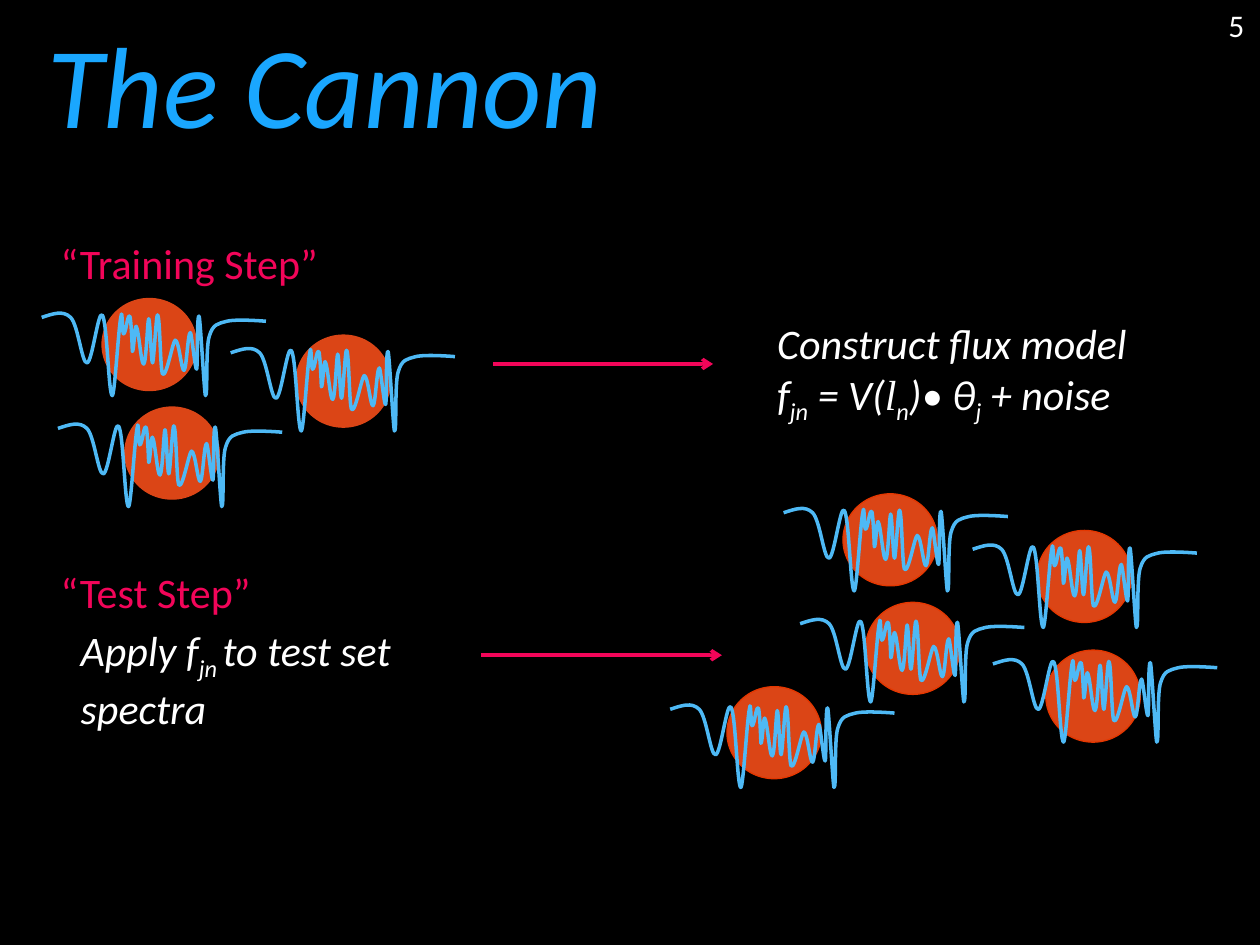
from lxml.etree import SubElement
from pptx import Presentation
from pptx.dml.color import RGBColor
from pptx.enum.shapes import MSO_CONNECTOR, MSO_SHAPE
from pptx.enum.text import MSO_ANCHOR as Anchor, MSO_AUTO_SIZE as AutoSize, PP_ALIGN as Align
from pptx.oxml.ns import qn
from pptx.util import Pt

BLACK = RGBColor(0x00, 0x00, 0x00)
WHITE = RGBColor(0xFF, 0xFF, 0xFF)
TITLE_BLUE = RGBColor(0x1A, 0xA7, 0xFF)
SPECTRUM_BLUE = RGBColor(0x4E, 0xB9, 0xF5)
PINK = RGBColor(0xF2, 0x05, 0x59)
STAR_FILL = RGBColor(0xDB, 0x45, 0x16)
TEST_OUTLINE = RGBColor(0xE4, 0x37, 0x00)

# Spectrum curve on a 0.72 pt grid: start, then (control, control, end) per curve
GRID = Pt(0.72)
SPECTRUM_START = (0, 2)
SPECTRUM_CURVES = [
    ((9, -1), (17, -4), (23, 2)), ((29, 8), (32, 39), (36, 38)),
    ((40, 38), (45, -4), (48, 0)), ((52, 4), (53, 63), (56, 64)),
    ((58, 64), (61, 9), (63, 1)), ((64, -7), (64, 15), (65, 15)),
    ((67, 15), (68, -1), (70, 1)), ((71, 3), (72, 27), (72, 29)),
    ((73, 30), (74, 8), (75, 9)), ((77, 11), (79, 40), (81, 39)),
    ((83, 38), (84, 4), (85, 3)), ((86, 3), (87, 39), (88, 38)),
    ((89, 38), (91, -2), (92, 0)), ((94, 1), (94, 43), (96, 47)),
    ((99, 50), (104, 21), (106, 20)), ((109, 20), (111, 45), (113, 44)),
    ((115, 43), (116, 14), (118, 14)), ((119, 14), (122, 45), (123, 43)),
    ((124, 41), (123, -2), (125, 1)), ((126, 4), (129, 61), (130, 64)),
    ((132, 66), (130, 26), (133, 17)), ((136, 7), (140, 7), (147, 5)),
    ((155, 3), (178, 5), (178, 5)),
]

# Star left, top and spectrum left, top
TRAINING_STARS = [
    (58.3, 170.6, 23.8, 180), (169.2, 191.5, 131.8, 200.2),
    (71.3, 232.6, 33.1, 243.4),
]
TEST_STARS = [
    (481.7, 282.2, 447.8, 291.6), (592.6, 303.1, 555.8, 312.5),
    (494.6, 344.2, 457.2, 355), (597.6, 371.5, 567.4, 378),
    (415.4, 392.4, 383, 403.9),
]


def place(shape, left, top, width, height):
    shape.left, shape.top = Pt(left), Pt(top)
    shape.width, shape.height = Pt(width), Pt(height)


def format_run(run, size, color, italic=False, name="Calibri"):
    font = run.font
    font.name, font.size, font.italic = name, Pt(size), italic
    font.color.rgb = color


def fill_placeholder(shape, box, text, size, color, italic=False):
    """Move a template placeholder and give it one plain line of text."""
    place(shape, *box)
    frame = shape.text_frame
    frame.text = text
    frame.auto_size = AutoSize.NONE
    frame.vertical_anchor = Anchor.MIDDLE
    paragraph = frame.paragraphs[0]
    paragraph.alignment = Align.LEFT
    properties = paragraph._p.get_or_add_pPr()
    properties.set("marL", "0")
    properties.set("indent", "0")
    SubElement(properties, qn("a:buNone"))
    format_run(paragraph.runs[0], size, color, italic)


def add_text(slide, box, lines, size, italic=False):
    """Each line is a list of (text, style); style is '', 'sub' or 'serif'."""
    frame = slide.shapes.add_textbox(*map(Pt, box)).text_frame
    frame.word_wrap = True
    for index, line in enumerate(lines):
        paragraph = frame.add_paragraph() if index else frame.paragraphs[0]
        for text, style in line:
            run = paragraph.add_run()
            run.text = text
            name = "Times New Roman" if style == "serif" else "Calibri"
            format_run(run, size, WHITE, italic, name)
            if style == "sub":
                run._r.get_or_add_rPr().set("baseline", "-25000")


def add_star(slide, left, top, outline):
    star = slide.shapes.add_shape(MSO_SHAPE.OVAL, Pt(left), Pt(top), Pt(54), Pt(52.6))
    star.shadow.inherit = False
    star.fill.solid()
    star.fill.fore_color.rgb = STAR_FILL
    star.line.color.rgb = outline
    star.line.width = Pt(0.75)


def add_spectrum(slide, left, top):
    builder = slide.shapes.build_freeform(*SPECTRUM_START, scale=GRID)
    builder.add_line_segments([curve[-1] for curve in SPECTRUM_CURVES], close=False)
    spectrum = builder.convert_to_shape(Pt(left), Pt(top))
    spectrum.shadow.inherit = False
    spectrum.fill.background()
    spectrum.line.color.rgb = SPECTRUM_BLUE
    spectrum.line.width = Pt(2)
    # Turn the straight segments into Bezier curves
    segments = list(spectrum._element.iter(qn("a:lnTo")))
    for segment, curve in zip(segments, SPECTRUM_CURVES):
        segment.tag = qn("a:cubicBezTo")
        segment.clear()
        for x, y in curve:
            SubElement(segment, qn("a:pt"), x=str(x), y=str(y))


def add_arrow(slide, start, end, y):
    arrow = slide.shapes.add_connector(
        MSO_CONNECTOR.STRAIGHT, Pt(start), Pt(y), Pt(end), Pt(y))
    arrow.line.color.rgb = PINK
    arrow.line.width = Pt(2)
    SubElement(arrow.line._get_or_add_ln(), qn("a:tailEnd"), type="arrow")
    SubElement(arrow._element.spPr, qn("a:effectLst"))


def main():
    presentation = Presentation()
    presentation.slide_width, presentation.slide_height = Pt(720), Pt(540)
    slide = presentation.slides.add_slide(presentation.slide_layouts[3])
    slide.background.fill.solid()
    slide.background.fill.fore_color.rgb = BLACK

    # Title and step headings
    title, training, test = slide.placeholders
    fill_placeholder(title, (20, 2, 648, 90), "The Cannon", 66, TITLE_BLUE, True)
    fill_placeholder(training, (27.4, 118, 357, 64), "“Training Step”", 24, PINK)
    fill_placeholder(test, (27.4, 306, 375, 64), "“Test Step”", 24, PINK)

    # Stars with their spectra
    for stars, outline in ((TRAINING_STARS, STAR_FILL), (TEST_STARS, TEST_OUTLINE)):
        for star_left, star_top, left, top in stars:
            add_star(slide, star_left, star_top, outline)
            add_spectrum(slide, left, top)

    # Arrows
    add_arrow(slide, 282, 407.5, 208)
    add_arrow(slide, 275, 412.5, 374.4)

    # Model and test descriptions
    add_text(slide, (437, 178, 258.5, 65.5), [
        [("Construct flux model", "")],
        [("f", ""), ("jn", "sub"), (" = V(", ""), ("l", "serif"), ("n", "sub"),
         (")• θ", ""), ("j", "sub"), (" + noise", "")],
    ], 24, True)
    add_text(slide, (39, 353.5, 221, 65.5), [
        [("Apply f", ""), ("jn ", "sub"), ("to test set spectra", "")],
    ], 24, True)

    # Page number
    add_text(slide, (694.8, 0, 25.2, 27.4), [[("5", "")]], 18)

    presentation.save("out.pptx")


if __name__ == "__main__":
    main()
